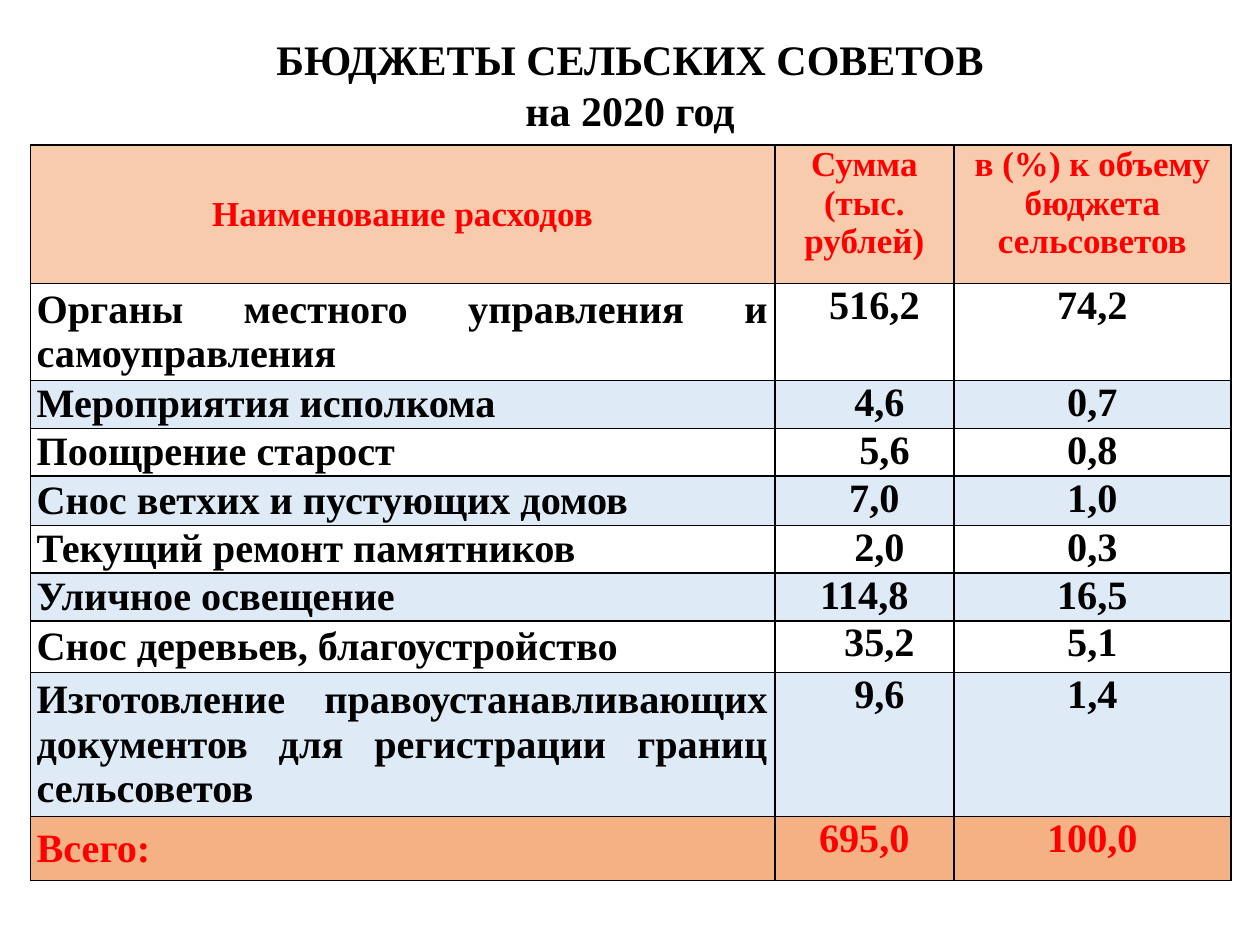
from dataclasses import dataclass

import pptx
import pptx.dml.color
import pptx.enum.text
import pptx.oxml
import pptx.oxml.ns
import pptx.util

Inches = pptx.util.Inches
Pt = pptx.util.Pt
Align = pptx.enum.text.PP_ALIGN
Anchor = pptx.enum.text.MSO_ANCHOR

FONT = "Times New Roman"
COLORS = {"ink": "000000", "red": "FF0000", "head": "F8CBAD",
          "band": "DEEBF7", "plain": "FFFFFF", "total": "F4B183"}
WIDTHS = (5.91, 1.42, 2.2)
SPACE = 0.08  # width of one space at 23 pt, in inches


@dataclass
class Row:
    name: str
    sum: str
    share: str
    high: float = 0.38
    shift: int = 0  # indent of the sum, in spaces
    fill: str = "plain"
    ink: str = "ink"
    size: int = 23


HEAD = Row("Наименование расходов", "Сумма\n(тыс. рублей)",
           "в (%) к объему бюджета\nсельсоветов", 1.1,
           fill="head", ink="red", size=20)
ROWS = [
    HEAD,
    Row("Органы местного управления и самоуправления", "516,2", "74,2", 0.77, 2),
    Row("Мероприятия исполкома", "4,6", "0,7", shift=3, fill="band"),
    Row("Поощрение старост", "5,6", "0,8", shift=4),
    Row("Снос ветхих и пустующих домов", "7,0", "1,0", 0.39, 2, "band"),
    Row("Текущий ремонт памятников", "2,0", "0,3", shift=3),
    Row("Уличное освещение", "114,8", "16,5", fill="band"),
    Row("Снос деревьев, благоустройство", "35,2", "5,1", 0.41, 3),
    Row("Изготовление правоустанавливающих документов для регистрации "
        "границ сельсоветов", "9,6", "1,4", 1.14, 3, "band"),
    Row("Всего:", "695,0", "100,0", 0.51, fill="total", ink="red"),
]


def rgb(key: str) -> pptx.dml.color.RGBColor:
    return pptx.dml.color.RGBColor.from_string(COLORS[key])


def write(frame, text: str, size: int, ink: str, align) -> None:
    """Put each line of text in its own bold paragraph."""
    for i, line in enumerate(text.split("\n")):
        para = frame.add_paragraph() if i else frame.paragraphs[0]
        para.alignment = align
        run = para.add_run()
        run.text = line
        run.font.name = FONT
        run.font.size = Pt(size)
        run.font.bold = True
        run.font.color.rgb = rgb(ink)


def border(cell) -> None:
    props = cell._tc.get_or_add_tcPr()
    for side in "LRTB":
        props.append(pptx.oxml.parse_xml(
            f'<a:ln{side} {pptx.oxml.ns.nsdecls("a")} w="{Pt(1)}"><a:solidFill>'
            f'<a:srgbClr val="{COLORS["ink"]}"/></a:solidFill></a:ln{side}>'))


def indent(para, **marks: float) -> None:
    props = para._p.get_or_add_pPr()
    for name, size in marks.items():
        props.set(name, str(Inches(size)))


def draw_row(table, num: int, row: Row) -> None:
    table.rows[num].height = Inches(row.high)
    for col, text in enumerate((row.name, row.sum, row.share)):
        cell = table.cell(num, col)
        cell.margin_left = cell.margin_right = Inches(0.05)
        cell.margin_top = cell.margin_bottom = 0
        cell.vertical_anchor = Anchor.TOP if col else Anchor.MIDDLE
        border(cell)
        cell.fill.solid()
        cell.fill.fore_color.rgb = rgb(row.fill)
        align = Align.CENTER if col or row is HEAD else Align.JUSTIFY
        write(cell.text_frame, text, row.size, row.ink, align)
    first = table.cell(num, 1).text_frame.paragraphs[0]
    if row is HEAD:
        indent(first, indent=-0.14)
    elif row.shift:
        indent(first, marL=row.shift * SPACE)


def draw_title(title) -> None:
    title.left, title.top = Inches(0), Inches(0.21)
    title.width, title.height = Inches(10), Inches(1.21)
    frame = title.text_frame
    frame.word_wrap = True
    frame.vertical_anchor = Anchor.MIDDLE
    frame.margin_bottom = Inches(0.34)
    write(frame, "БЮДЖЕТЫ СЕЛЬСКИХ СОВЕТОВ\nна 2020 год", 24, "ink", Align.CENTER)


def draw_table(slide) -> None:
    table = slide.shapes.add_table(
        len(ROWS), len(WIDTHS), Inches(0.24), Inches(1.15),
        Inches(sum(WIDTHS)), Inches(sum(row.high for row in ROWS))).table
    table.first_row = table.horz_banding = False
    for col, width in zip(table.columns, WIDTHS):
        col.width = Inches(width)
    for num, row in enumerate(ROWS):
        draw_row(table, num, row)


def main() -> None:
    deck = pptx.Presentation()
    deck.slide_width, deck.slide_height = Inches(10), Inches(7.5)
    slide = deck.slides.add_slide(deck.slide_layouts[5])
    draw_title(slide.shapes.title)
    draw_table(slide)
    deck.save("out.pptx")


if __name__ == "__main__":
    main()
